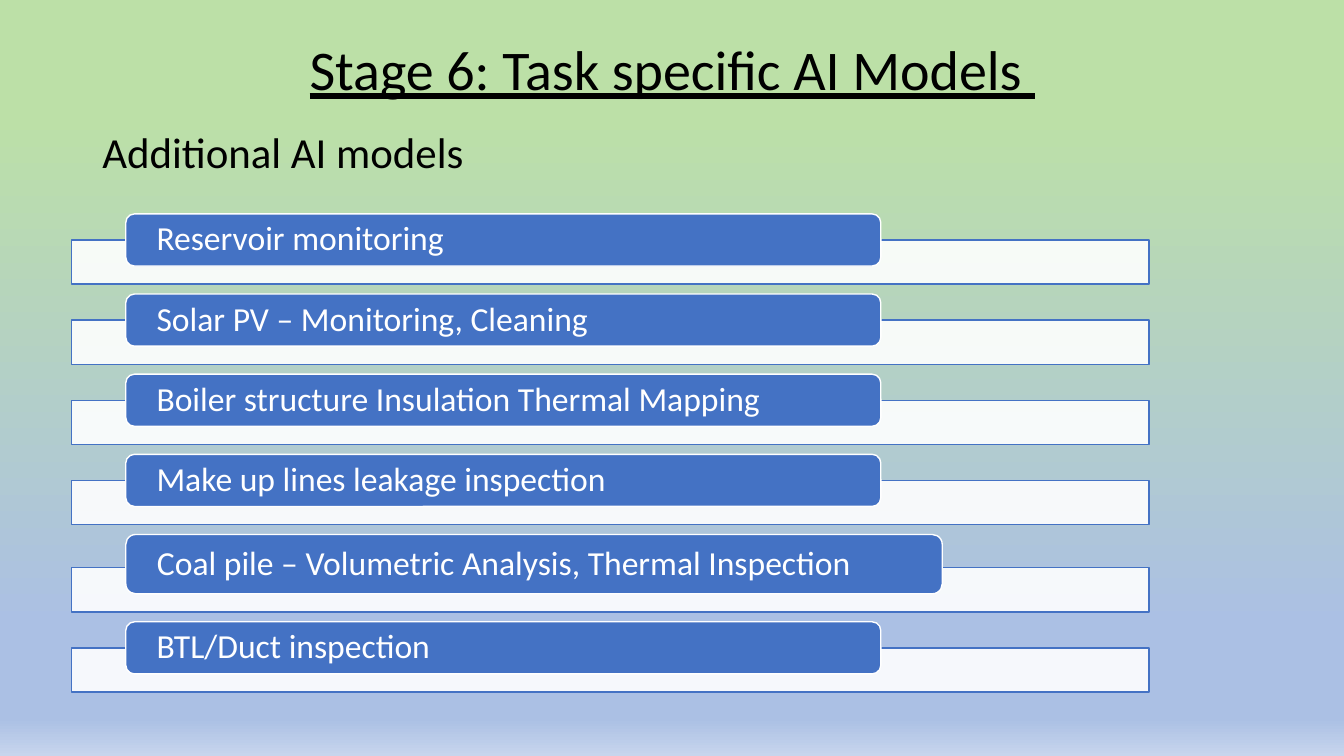
from lxml import etree
from pptx import Presentation
from pptx import util as u
from pptx.dml.color import RGBColor
from pptx.enum import shapes, text
from pptx.oxml.ns import qn

COLORS = {"text": "000000", "white": "FFFFFF", "blue": "4472C4"}
BACKGROUND_STOPS = [(15, "BCE0A7"), (83, "ABC0E4"), (95, "ABC0E4"), (100, "C7D5ED")]
WIDTH, HEIGHT = u.Inches(13.333), u.Inches(7.5)

# Shares of the slide's size, in percent
HEADING_LEFT, HEADING_WIDTH = 6.88, 86.25
BAR_LEFT, BAR_WIDTH, BAR_HEIGHT = 5.31, 80.2, 5.83
LABEL_LEFT, LABEL_WIDTH, LABEL_HEIGHT = 9.36, 56.18, 6.9
WIDE_LABEL_WIDTH, TALL_LABEL_HEIGHT = 60.75, 7.85
LIST_TOP, OVERLAP, ROW_GAP = 28.3, 3.45, 1.32

MODELS = [
    ("Reservoir monitoring", LABEL_WIDTH, LABEL_HEIGHT),
    ("Solar PV – Monitoring, Cleaning", LABEL_WIDTH, LABEL_HEIGHT),
    ("Boiler structure Insulation Thermal Mapping", LABEL_WIDTH, LABEL_HEIGHT),
    ("Make up lines leakage inspection", LABEL_WIDTH, LABEL_HEIGHT),
    ("Coal pile – Volumetric Analysis, Thermal Inspection", WIDE_LABEL_WIDTH, TALL_LABEL_HEIGHT),
    ("BTL/Duct inspection", LABEL_WIDTH, LABEL_HEIGHT),
]


def color(name):
    return RGBColor.from_string(COLORS[name])


def box(left, top, width, height):
    """Turn percentages of the slide into left, top, width and height."""
    return (int(WIDTH * left / 100), int(HEIGHT * top / 100),
            int(WIDTH * width / 100), int(HEIGHT * height / 100))


def place(shape, left, top, width, height):
    shape.left, shape.top, shape.width, shape.height = box(left, top, width, height)


def paint_background(slide):
    fill = slide.background.fill
    fill.gradient()
    fill.gradient_angle = 270
    stops = next(slide._element.iter(qn("a:gsLst")))
    for stop in list(stops):
        stops.remove(stop)
    for percent, shade in BACKGROUND_STOPS:
        stop = etree.SubElement(stops, qn("a:gs"), pos=str(percent * 1000))
        etree.SubElement(stop, qn("a:srgbClr"), val=shade)


def write(shape, words, size, color_name, align=text.PP_ALIGN.LEFT, underline=False):
    frame = shape.text_frame
    frame.text = words
    frame.word_wrap = True
    frame.auto_size = text.MSO_AUTO_SIZE.NONE
    frame.vertical_anchor = text.MSO_ANCHOR.MIDDLE
    paragraph = frame.paragraphs[0]
    paragraph.alignment = align
    paragraph.line_spacing = 0.9
    font = paragraph.runs[0].font
    font.name, font.size, font.underline = "Calibri", u.Pt(size), underline
    font.color.rgb = color(color_name)


def add_block(slide, kind, position, fill_name, line_name):
    shape = slide.shapes.add_shape(kind, *box(*position))
    shape.shadow.inherit = False
    shape.fill.solid()
    shape.fill.fore_color.rgb = color(fill_name)
    shape.line.color.rgb = color(line_name)
    shape.line.width = u.Pt(1)
    return shape


def add_bar(slide, top):
    bar = add_block(slide, shapes.MSO_SHAPE.RECTANGLE,
                    (BAR_LEFT, top, BAR_WIDTH, BAR_HEIGHT), "white", "blue")
    shade = bar._element.spPr.find(qn("a:solidFill"))[0]
    etree.SubElement(shade, qn("a:alpha"), val="90000")


def add_label(slide, words, top, width, height):
    label = add_block(slide, shapes.MSO_SHAPE.ROUNDED_RECTANGLE,
                      (LABEL_LEFT, top, width, height), "blue", "white")
    write(label, words, 24, "white")
    frame = label.text_frame
    frame.margin_left = frame.margin_right = u.Inches(0.28)
    frame.margin_top = frame.margin_bottom = 0


def add_model_list(slide):
    """Stack the rows: each label overlaps the top of the bar behind it."""
    top = LIST_TOP
    for words, width, height in MODELS:
        bar_top = top + height - OVERLAP
        add_bar(slide, bar_top)
        add_label(slide, words, top, width, height)
        top = bar_top + BAR_HEIGHT + ROW_GAP


def main():
    presentation = Presentation()
    presentation.slide_width, presentation.slide_height = WIDTH, HEIGHT
    slide = presentation.slides.add_slide(presentation.slide_layouts[5])
    paint_background(slide)

    title = slide.shapes.title
    place(title, HEADING_LEFT, 2.5, HEADING_WIDTH, 14.1)
    write(title, "Stage 6: Task specific AI Models ", 40, "text",
          text.PP_ALIGN.CENTER, underline=True)

    subheading = slide.shapes.add_textbox(*box(HEADING_LEFT, 17, HEADING_WIDTH, 7))
    write(subheading, "Additional AI models", 30.6, "text")

    add_model_list(slide)
    presentation.save("out.pptx")


if __name__ == "__main__":
    main()
